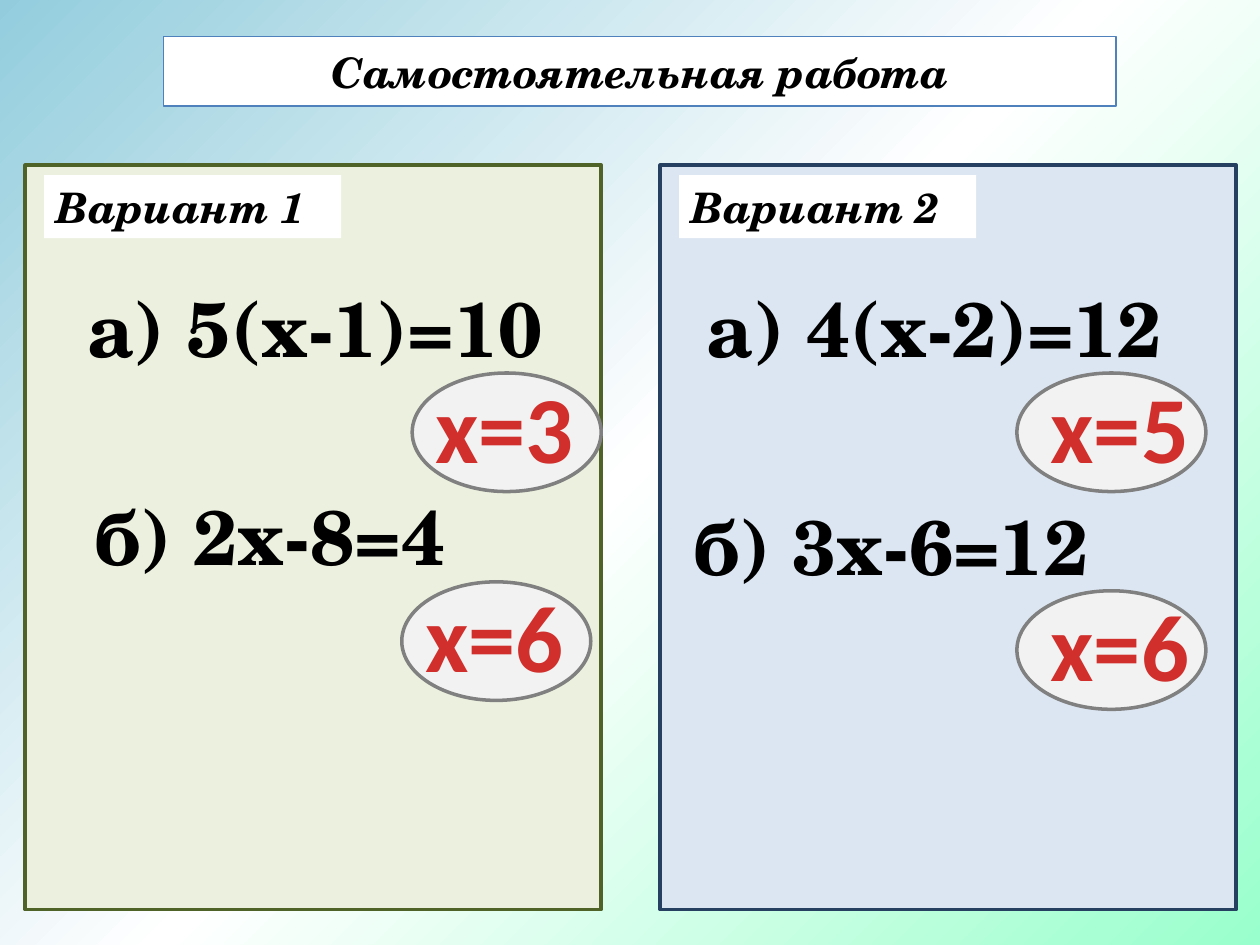
import copy
import pptx
import pptx.util
import pptx.dml.color
import pptx.enum.shapes
import pptx.enum.text
import pptx.oxml.ns

Cm = pptx.util.Cm
Kind = pptx.enum.shapes.MSO_SHAPE
Text = pptx.enum.text

HUES = {"white": "FFFFFF", "black": "000000", "blue": "4F81BD",
        "gray": "F2F2F2", "edge": "808080"}
SKY = [(0, "93CDDD"), (0.5, "FFFFFF"), (1, "99FFCC")]
RED = [(0, "FC7C7A"), (0.75, "D02F2C"), (1, "C70500")]

TITLE = "Cамостоятельная работа"
PANELS = [
    {"name": "Вариант 1", "left": 0.51, "fill": "EBF1DE", "line": "4F6228",
     "inset": 0.2,
     "tasks": [("a) 5(x-1)=10", 1.3, 5.54, 10.13, "x=3", 8.31, 7.52),
               ("б) 2x-8=4", 1.3, 9.73, 8.28, "x=6", 8.1, 11.73)]},
    {"name": "Вариант 2", "left": 13.31, "fill": "DCE6F2", "line": "254061",
     "inset": 0.41,
     "tasks": [("a) 4(x-2)=12", 13.69, 5.54, 10.31, "x=5", 20.5, 7.52),
               ("б) 3x-6=12", 13.49, 9.93, 8.94, "x=6", 20.5, 11.91)]},
]

SERIF = {"name": "TeX Gyre Schola", "bold": True}
HEAD = {**SERIF, "size": pptx.util.Pt(24), "italic": True}
TASK = {**SERIF, "size": pptx.util.Pt(44)}
REPLY = {"name": "Calibri", "bold": True, "size": pptx.util.Pt(54)}
MID = Text.PP_ALIGN.CENTER
LEFT = Text.PP_ALIGN.LEFT


def paint(fill, hue):
    fill.solid()
    fill.fore_color.rgb = pptx.dml.color.RGBColor.from_string(hue)


def blend(fill, root, stops, angle):
    fill.gradient()
    fill.gradient_angle = angle
    first = next(root.iter(pptx.oxml.ns.qn("a:gs")))
    first.addnext(copy.deepcopy(first))
    for stop, (place, hue) in zip(fill.gradient_stops, stops):
        stop.position = place
        stop.color.rgb = pptx.dml.color.RGBColor.from_string(hue)


def draw(slide, kind, box, hue, edge=None, width=2):
    shape = slide.shapes.add_shape(kind, *map(Cm, box))
    shape.shadow.inherit = False
    paint(shape.fill, hue)
    if edge:
        paint(shape.line.fill, edge)
        shape.line.width = pptx.util.Pt(width)
    else:
        shape.line.fill.background()
    return shape


def write(shape, words, style, align, wrap=False,
          anchor=Text.MSO_ANCHOR.TOP, stops=None):
    frame = shape.text_frame
    frame.word_wrap = wrap
    frame.vertical_anchor = anchor
    para = frame.paragraphs[0]
    para.alignment = align
    run = para.add_run()
    run.text = words
    for key, value in style.items():
        setattr(run.font, key, value)
    if stops:
        blend(run.font.fill, shape.element, stops, 270)
    else:
        paint(run.font.fill, HUES["black"])


def label(slide, box, words, style, stops=None):
    shape = slide.shapes.add_textbox(*map(Cm, box))
    write(shape, words, style, MID, stops=stops)


def main():
    deck = pptx.Presentation()
    deck.slide_width, deck.slide_height = Cm(25.4), Cm(19.05)
    slide = deck.slides.add_slide(deck.slide_layouts[6])
    blend(slide.background.fill, slide.element, SKY, 315)

    title = draw(slide, Kind.RECTANGLE, (3.3, 0.74, 19.2, 1.4),
                 HUES["white"], HUES["blue"], 0.75)
    write(title, TITLE, HEAD, MID, anchor=Text.MSO_ANCHOR.MIDDLE)

    for panel in PANELS:
        left = panel["left"]
        draw(slide, Kind.RECTANGLE, (left, 3.33, 11.61, 15.01),
             panel["fill"], panel["line"])
        tag = draw(slide, Kind.RECTANGLE, (left + 0.38, 3.53, 5.99, 1.27),
                   HUES["white"])
        write(tag, panel["name"], HEAD, LEFT, wrap=True)
        for task, x, y, wide, reply, across, down in panel["tasks"]:
            label(slide, (x, y, wide, 2.13), task, TASK)
            draw(slide, Kind.OVAL, (across, down, 3.81, 2.39),
                 HUES["gray"], HUES["edge"])
            label(slide, (across + panel["inset"], down - 0.2, 3.33, 2.57),
                  reply, REPLY, RED)

    deck.save("out.pptx")


if __name__ == "__main__":
    main()
